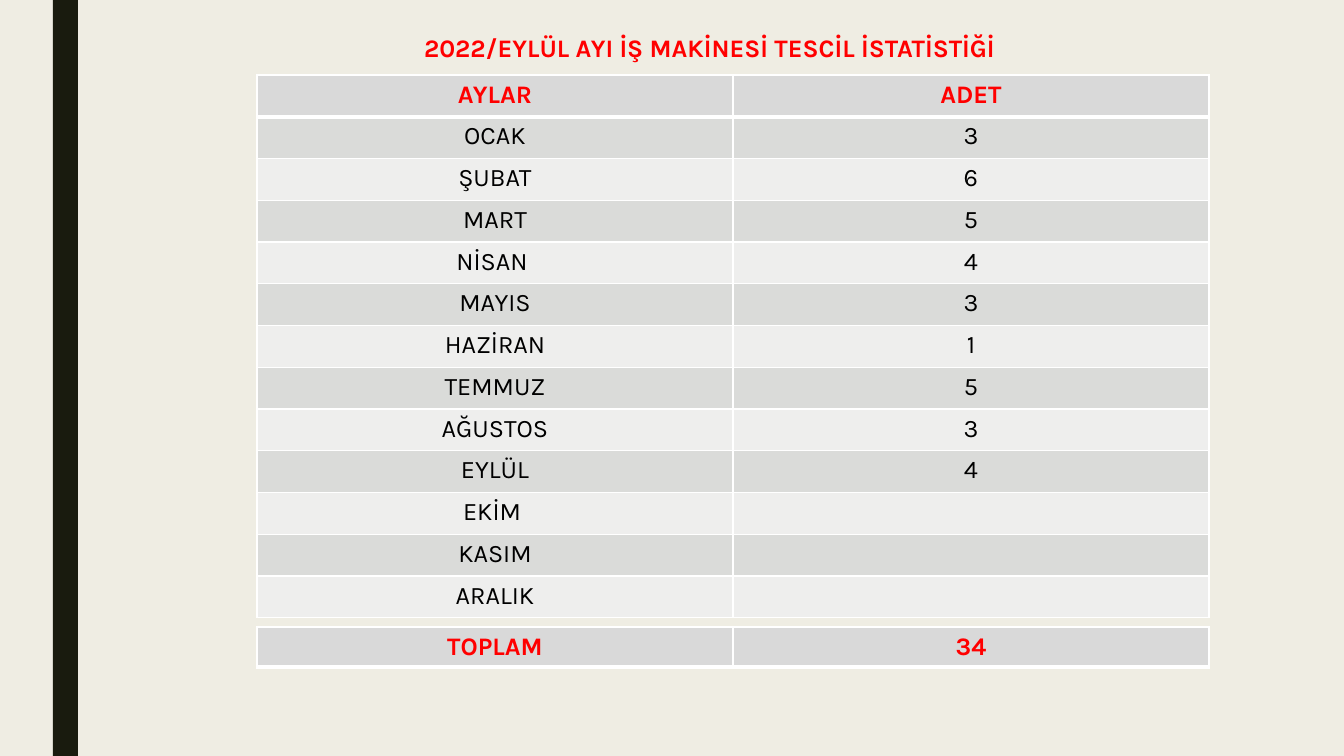
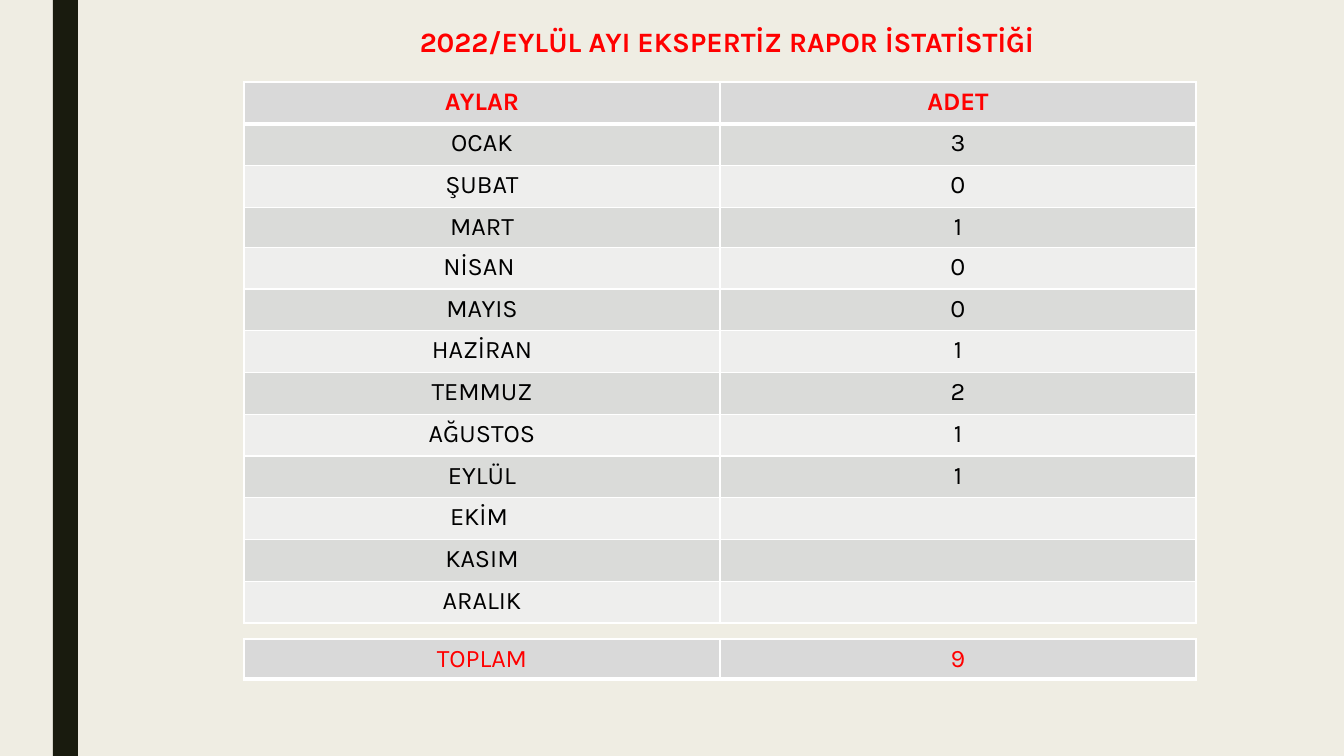
from dataclasses import dataclass

import lxml.etree
import pptx
import pptx.dml.color
import pptx.enum.shapes
import pptx.enum.text
import pptx.oxml.ns
import pptx.util

MONTHS = ["OCAK", "ŞUBAT", "MART", "NİSAN ", "MAYIS", "HAZİRAN", "TEMMUZ",
          "AĞUSTOS", "EYLÜL", "EKİM ", "KASIM", "ARALIK"]


@dataclass(frozen=True)
class Theme:
    font: str = "Karla"
    background: str = "EFEDE3"
    band: str = "191B0E"
    accent: str = "FF0000"
    text: str = "000000"
    header_fill: str = "D9D9D9"
    row_fills: tuple = ("DADBD9", "EEEEED")
    border: str = "FFFFFF"
    thin: int = 1
    thick: int = 3
    table_size: int = 18
    title_spacing: float = 0.89


def emu(px):
    return pptx.util.Emu(round(px * 914400 / 100.8))


def color(value):
    return pptx.dml.color.RGBColor.from_string(value)


class StatisticsDeck:
    WIDTH, HEIGHT = 1344, 756
    TABLE_WIDTH = 952
    TITLE_ONLY = 5

    def __init__(self, theme):
        self.theme = theme
        self.deck = pptx.Presentation()
        self.deck.slide_width = emu(self.WIDTH)
        self.deck.slide_height = emu(self.HEIGHT)
        self.page = None
        fill = self.deck.slide_master.background.fill
        fill.solid()
        fill.fore_color.rgb = color(theme.background)

    def add_page(self):
        layout = self.deck.slide_layouts[self.TITLE_ONLY]
        self.page = self.deck.slides.add_slide(layout)
        self.add_band()

    def add_band(self):
        band = self.page.shapes.add_shape(
            pptx.enum.shapes.MSO_SHAPE.RECTANGLE,
            emu(53), 0, emu(25), emu(self.HEIGHT))
        band.shadow.inherit = False
        band.fill.solid()
        band.fill.fore_color.rgb = color(self.theme.band)
        band.line.fill.background()

    def format_text(self, frame, size, ink, bold):
        for para in frame.paragraphs:
            para.alignment = pptx.enum.text.PP_ALIGN.CENTER
            for span in para.runs:
                span.font.name = self.theme.font
                span.font.size = pptx.util.Pt(size)
                span.font.bold = bold
                span.font.color.rgb = color(ink)

    def add_title(self, text, left, top, width, height, size):
        box = self.page.shapes.title
        box.left, box.top = emu(left), emu(top)
        box.width, box.height = emu(width), emu(height)
        frame = box.text_frame
        frame.text = text
        frame.word_wrap = True
        frame.auto_size = pptx.enum.text.MSO_AUTO_SIZE.NONE
        frame.vertical_anchor = pptx.enum.text.MSO_ANCHOR.MIDDLE
        frame.paragraphs[0].line_spacing = self.theme.title_spacing
        self.format_text(frame, size, self.theme.accent, True)

    def add_borders(self, cell, top, bottom):
        properties = cell._tc.get_or_add_tcPr()
        thin = self.theme.thin
        edges = {"a:lnL": thin, "a:lnR": thin, "a:lnT": top, "a:lnB": bottom}
        for position, (tag, points) in enumerate(edges.items()):
            line = lxml.etree.Element(pptx.oxml.ns.qn(tag),
                                      w=str(pptx.util.Pt(points)))
            fill = lxml.etree.SubElement(line, pptx.oxml.ns.qn("a:solidFill"))
            lxml.etree.SubElement(fill, pptx.oxml.ns.qn("a:srgbClr"),
                                  val=self.theme.border)
            properties.insert(position, line)

    def add_table(self, rows, left, top, height, header_bold=True):
        theme = self.theme
        table = self.page.shapes.add_table(
            len(rows), len(rows[0]), emu(left), emu(top),
            emu(self.TABLE_WIDTH), emu(height)).table
        table.first_row = table.horz_banding = False
        for index, values in enumerate(rows):
            header = index == 0
            fill = theme.header_fill if header else theme.row_fills[(index - 1) % 2]
            ink = theme.accent if header else theme.text
            top_line = theme.thick if index == 1 else theme.thin
            bottom_line = theme.thick if header else theme.thin
            for column, value in enumerate(values):
                cell = table.cell(index, column)
                cell.text_frame.text = str(value)
                cell.fill.solid()
                cell.fill.fore_color.rgb = color(fill)
                self.add_borders(cell, top_line, bottom_line)
                self.format_text(cell.text_frame, theme.table_size, ink,
                                 header and header_bold)
        return table

    def add_statistics(self, counts, left, top, total_top, total_bold):
        padded = counts + [""] * (len(MONTHS) - len(counts))
        rows = [("AYLAR", "ADET"), *zip(MONTHS, padded)]
        months = self.add_table(rows, left, top, 543)
        self.add_table([("TOPLAM", sum(counts))], left, total_top, 40, total_bold)
        return months


def main():
    report = StatisticsDeck(Theme())

    report.add_page()
    report.add_title("2022/EYLÜL AYI İŞ MAKİNESİ TESCİL İSTATİSTİĞİ",
                     351, 32, 717, 35, 18)
    report.add_statistics([3, 6, 5, 4, 3, 1, 5, 3, 4], 257, 75, 627, True)

    report.add_page()
    report.add_title("2022/EYLÜL AYI EKSPERTİZ RAPOR İSTATİSTİĞİ",
                     384, 22, 686, 44, 20)
    months = report.add_statistics([3, 0, 1, 0, 0, 1, 2, 1, 1],
                                   244, 82, 639, False)
    months.rows[MONTHS.index("MART") + 1].height = emu(40)

    report.deck.save("out.pptx")


if __name__ == "__main__":
    main()
